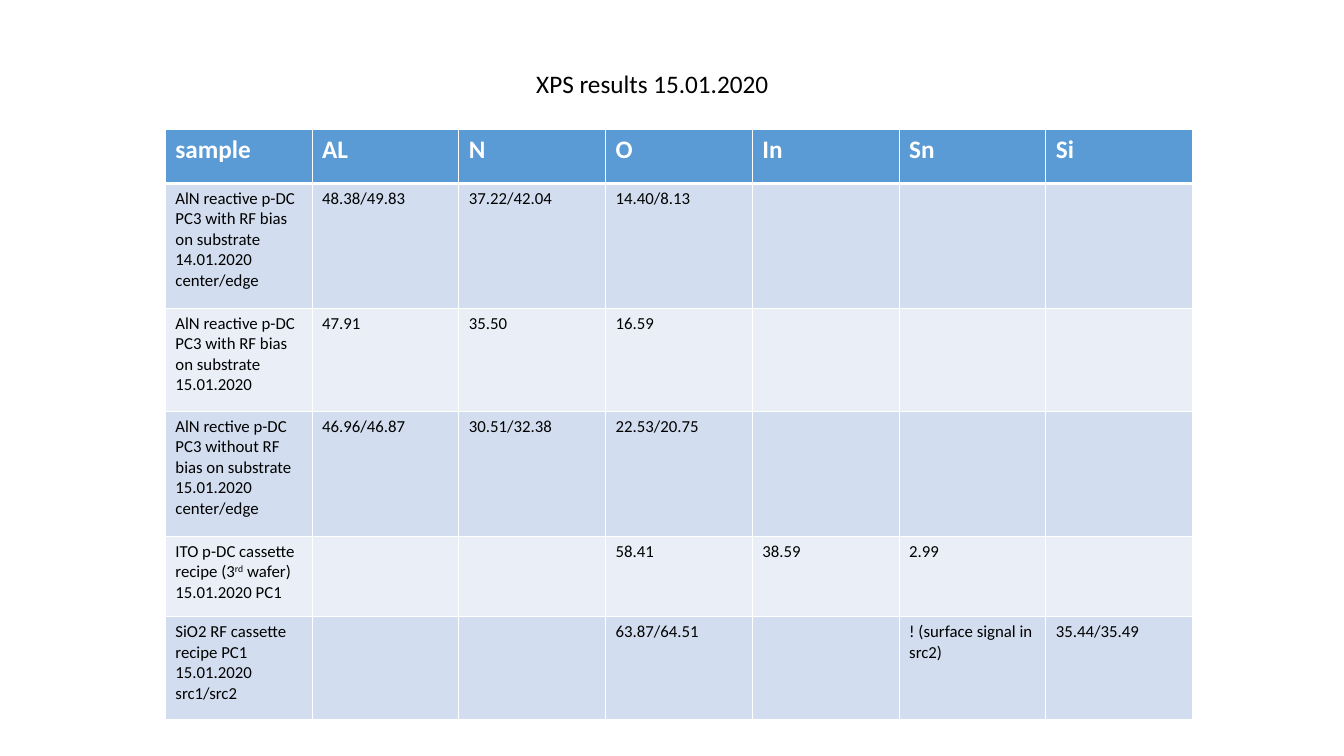
from lxml import etree
from pptx import Presentation
from pptx.dml.color import RGBColor
from pptx.enum.text import MSO_AUTO_SIZE
from pptx.oxml.ns import qn
from pptx.util import Inches, Pt

FIT_SHAPE = MSO_AUTO_SIZE.SHAPE_TO_FIT_TEXT

TITLE = "XPS results 15.01.2020"
HEADER = ["sample", "AL", "N", "O", "In", "Sn", "Si"]
SUPERSCRIPT_MARK = "^"
RESULTS = [
    (["AlN reactive p-DC PC3 with RF bias on substrate", "14.01.2020", "center/edge"],
     {"AL": "48.38/49.83", "N": "37.22/42.04", "O": "14.40/8.13"}),
    (["AlN reactive p-DC PC3 with RF bias on substrate", "15.01.2020"],
     {"AL": "47.91", "N": "35.50", "O": "16.59"}),
    (["AlN rective p-DC PC3 without RF bias on substrate", "15.01.2020", "center/edge"],
     {"AL": "46.96/46.87", "N": "30.51/32.38", "O": "22.53/20.75"}),
    (["ITO p-DC cassette recipe (3^rd^ wafer)", "15.01.2020 PC1"],
     {"O": "58.41", "In": "38.59", "Sn": "2.99"}),
    (["SiO2 RF cassette recipe PC1", "15.01.2020", "src1/src2"],
     {"O": "63.87/64.51", "Sn": "! (surface signal in src2)", "Si": "35.44/35.49"}),
]
COLORS = {"text": "000000", "white": "FFFFFF", "header": "5B9BD5",
          "odd": "D2DEEF", "even": "EAEFF7"}
FONT = "Calibri"
SLIDE_W, SLIDE_H = 13.33, 7.5
TABLE_LEFT, TABLE_TOP, TABLE_W = 1.64, 1.28, 10.19
ROW_HEIGHTS = [0.54, 1.24, 1.02, 1.24, 0.8, 1.02]


def add_run(p, text, size, color, bold=False):
    r = p.add_run()
    r.text = text
    r.font.name = FONT
    r.font.size = Pt(size)
    r.font.bold = bold
    r.font.color.rgb = RGBColor.from_string(COLORS[color])
    return r


def write_lines(tf, lines, size, color, bold=False):
    for i, line in enumerate(lines):
        p = tf.paragraphs[0] if i == 0 else tf.add_paragraph()
        for j, part in enumerate(line.split(SUPERSCRIPT_MARK)):
            r = add_run(p, part, size, color, bold)
            if j % 2:
                r.font._element.set("baseline", "30000")


def set_borders(cell, bottom):
    tc_pr = cell._tc.get_or_add_tcPr()
    widths = {"lnL": 1, "lnR": 1, "lnT": 1, "lnB": bottom}
    for i, (side, width) in enumerate(widths.items()):
        ln = etree.Element(qn("a:" + side), w=str(Pt(width)))
        fill = etree.SubElement(ln, qn("a:solidFill"))
        etree.SubElement(fill, qn("a:srgbClr"), val=COLORS["white"])
        tc_pr.insert(i, ln)


def fill_cell(cell, lines, fill, size, color, bold=False, bottom=1):
    cell.fill.solid()
    cell.fill.fore_color.rgb = RGBColor.from_string(COLORS[fill])
    set_borders(cell, bottom)
    write_lines(cell.text_frame, lines, size, color, bold)


def add_title(slide):
    box = slide.shapes.add_textbox(Inches(5.22), Inches(0.63), Inches(2.58), Inches(0.4))
    tf = box.text_frame
    tf.word_wrap = False
    tf.auto_size = FIT_SHAPE
    write_lines(tf, [TITLE], 18, "text")


def add_results(slide):
    table = slide.shapes.add_table(
        len(ROW_HEIGHTS), len(HEADER), Inches(TABLE_LEFT), Inches(TABLE_TOP),
        Inches(TABLE_W), Inches(sum(ROW_HEIGHTS))).table
    for column in table.columns:
        column.width = Inches(TABLE_W / len(HEADER))
    for row, height in zip(table.rows, ROW_HEIGHTS):
        row.height = Inches(height)
    for c, name in enumerate(HEADER):
        fill_cell(table.cell(0, c), [name], "header", 18, "white", True, 3)
    for i, (sample, values) in enumerate(RESULTS, 1):
        band = "odd" if i % 2 else "even"
        fill_cell(table.cell(i, 0), sample, band, 12, "text")
        for c, element in enumerate(HEADER[1:], 1):
            lines = [values[element]] if element in values else []
            fill_cell(table.cell(i, c), lines, band, 12, "text")


def main():
    prs = Presentation()
    prs.slide_width, prs.slide_height = Inches(SLIDE_W), Inches(SLIDE_H)
    slide = prs.slides.add_slide(prs.slide_layouts[6])
    add_title(slide)
    add_results(slide)
    prs.save("out.pptx")


if __name__ == "__main__":
    main()
